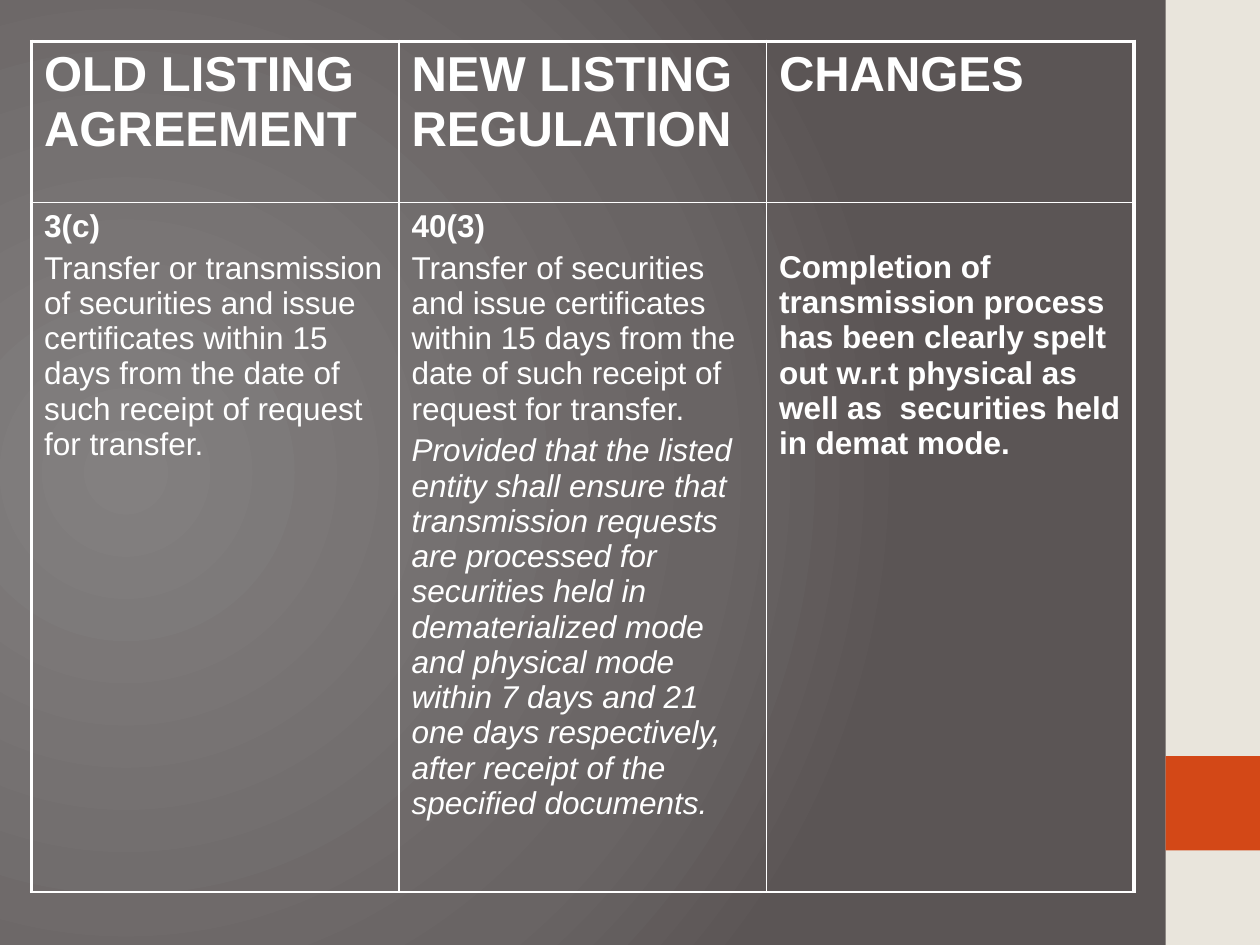
from dataclasses import dataclass

from pptx import Presentation
from pptx.dml.color import RGBColor
from pptx.enum.shapes import MSO_SHAPE as Shape
from pptx.oxml import parse_xml
from pptx.oxml.ns import nsdecls
from pptx.util import Pt

WHITE = RGBColor(0xFF, 0xFF, 0xFF)
CREAM = RGBColor(0xE9, 0xE5, 0xDC)
ORANGE = RGBColor(0xD3, 0x48, 0x17)
BACKGROUND_STOPS = (
    (0, RGBColor(0x83, 0x80, 0x80)),
    (75, RGBColor(0x69, 0x64, 0x64)),
    (100, RGBColor(0x5B, 0x55, 0x55)),
)
FONT = "Arial"
THIN, THICK = 1, 2.25
COLUMN_WIDTH = 210
ROW_HEIGHTS = (92.2, 393.8)
HEADER_SIZE, BODY_SIZE = 28, 18


@dataclass(frozen=True)
class Band:
    top: float
    height: float
    color: RGBColor


@dataclass(frozen=True)
class Passage:
    text: str
    size: float = BODY_SIZE
    bold: bool = False
    italic: bool = False


@dataclass(frozen=True)
class Entry:
    passages: tuple[Passage, ...]
    margin_top: float = 3.6


SIDE_BANDS = (Band(0, 540, CREAM), Band(432, 54, ORANGE))

HEADERS = tuple(
    Entry((Passage(title, HEADER_SIZE, bold=True),))
    for title in ("OLD LISTING  AGREEMENT", "NEW LISTING REGULATION", "CHANGES")
)
OLD_RULE = Entry((
    Passage("3(c)", bold=True),
    Passage("Transfer or transmission of securities and issue certificates within "
            "15 days from the date of such receipt of request for transfer."),
))
NEW_RULE = Entry((
    Passage("40(3)", bold=True),
    Passage("Transfer of securities and issue certificates within 15 days from "
            "the date of such receipt of request for transfer."),
    Passage("Provided that the listed entity shall ensure that transmission requests "
            "are processed for securities held in dematerialized mode and physical "
            "mode within 7 days and 21 one days respectively, after receipt of the "
            "specified documents.", italic=True),
))
# The comment starts level with the second paragraph of its neighbours
CHANGE = Entry((
    Passage("Completion of transmission process has been clearly spelt out w.r.t "
            "physical as well as  securities held in demat mode.", bold=True),
), margin_top=27)
ROWS = (HEADERS, (OLD_RULE, NEW_RULE, CHANGE))


def paint_background(slide) -> None:
    stops = "".join(
        f'<a:gs pos="{position * 1000}"><a:srgbClr val="{color}"/></a:gs>'
        for position, color in BACKGROUND_STOPS
    )
    slide.element.cSld.insert(0, parse_xml(
        f'<p:bg {nsdecls("p", "a")}><p:bgPr><a:gradFill rotWithShape="1">'
        f'<a:gsLst>{stops}</a:gsLst><a:path path="circle">'
        '<a:fillToRect l="20000" t="50000" r="100000" b="50000"/></a:path>'
        '</a:gradFill><a:effectLst/></p:bgPr></p:bg>'
    ))


def draw_band(slide, band: Band) -> None:
    strip = slide.shapes.add_shape(
        Shape.RECTANGLE, Pt(666), Pt(band.top), Pt(54), Pt(band.height))
    strip.shadow.inherit = False
    strip.fill.solid()
    strip.fill.fore_color.rgb = band.color
    strip.line.fill.background()


def set_borders(cell, widths: dict[str, float]) -> None:
    properties = cell._tc.get_or_add_tcPr()
    for index, (side, width) in enumerate(widths.items()):
        properties.insert(index, parse_xml(
            f'<a:ln{side} {nsdecls("a")} w="{Pt(width)}"><a:solidFill>'
            f'<a:srgbClr val="{WHITE}"/></a:solidFill></a:ln{side}>'
        ))


def write_entry(cell, entry: Entry) -> None:
    cell.fill.background()
    cell.margin_left = cell.margin_right = Pt(7.2)
    cell.margin_top, cell.margin_bottom = Pt(entry.margin_top), Pt(3.6)
    frame = cell.text_frame
    frame.text = "\n".join(passage.text for passage in entry.passages)
    for paragraph, passage in zip(frame.paragraphs, entry.passages):
        paragraph.space_before = Pt(passage.size * 0.2)
        font = paragraph.runs[0].font
        font.name, font.size = FONT, Pt(passage.size)
        font.bold, font.italic = passage.bold, passage.italic
        font.color.rgb = WHITE


def draw_comparison(slide) -> None:
    column_count = len(HEADERS)
    comparison = slide.shapes.add_table(
        len(ROWS), column_count, Pt(18), Pt(23.6),
        Pt(COLUMN_WIDTH * column_count), Pt(sum(ROW_HEIGHTS))).table
    comparison.first_row = comparison.horz_banding = False
    for column in comparison.columns:
        column.width = Pt(COLUMN_WIDTH)
    for row_index, (entries, height) in enumerate(zip(ROWS, ROW_HEIGHTS)):
        comparison.rows[row_index].height = Pt(height)
        for column_index, entry in enumerate(entries):
            cell = comparison.cell(row_index, column_index)
            write_entry(cell, entry)
            set_borders(cell, {
                "L": THICK if column_index == 0 else THIN,
                "R": THICK if column_index == column_count - 1 else THIN,
                "T": THICK if row_index == 0 else THIN,
                "B": THIN,
            })


def main() -> None:
    presentation = Presentation()
    presentation.slide_width, presentation.slide_height = Pt(720), Pt(540)
    slide = presentation.slides.add_slide(presentation.slide_layouts[6])

    # Backdrop and side bands
    paint_background(slide)
    for band in SIDE_BANDS:
        draw_band(slide, band)

    # Comparison of old and new rules
    draw_comparison(slide)
    presentation.save("out.pptx")


if __name__ == "__main__":
    main()
